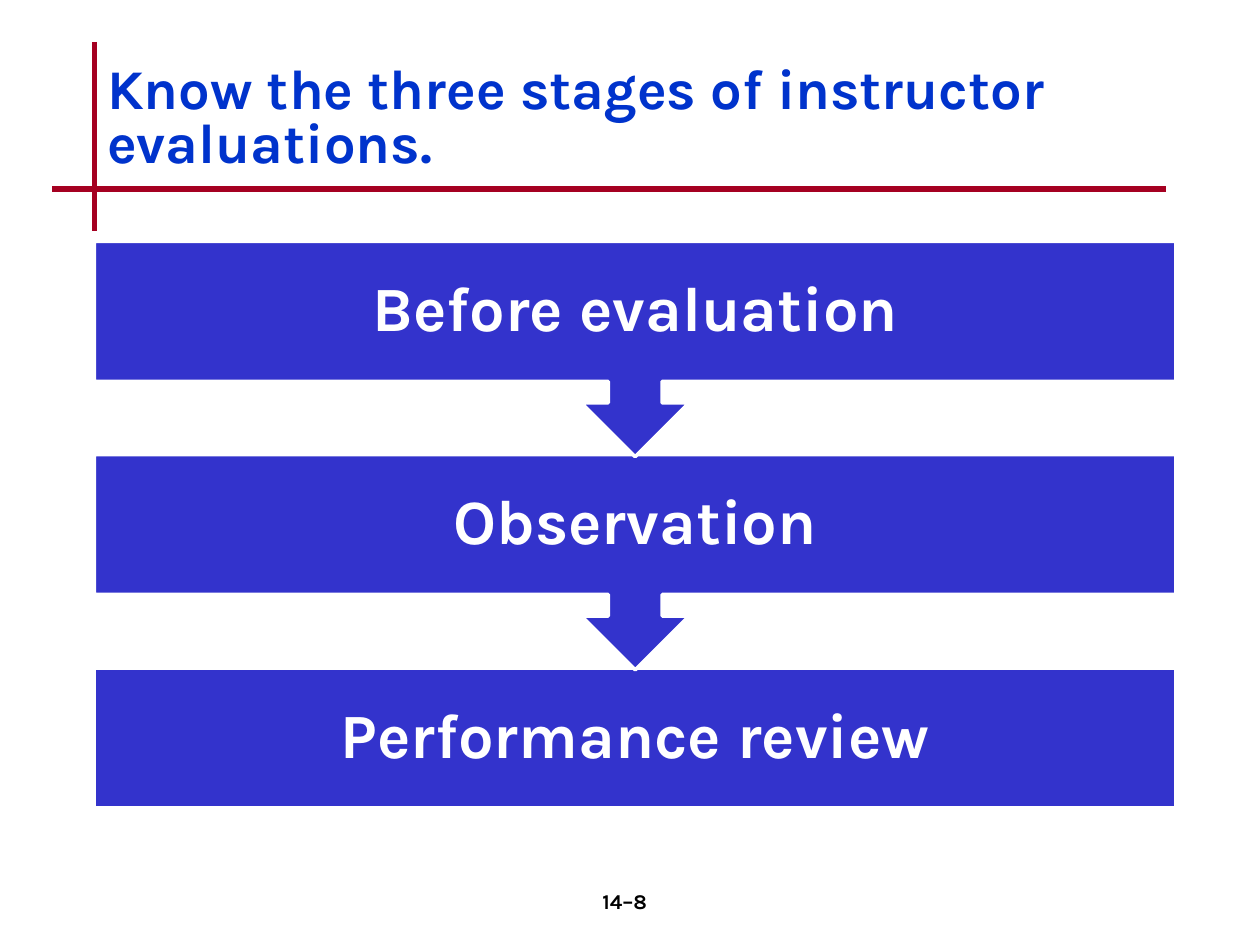
"""Build a slide showing the three stages of instructor evaluations."""
from dataclasses import dataclass

from lxml.etree import SubElement
from pptx import Presentation
from pptx.dml.color import RGBColor
from pptx.enum.shapes import MSO_CONNECTOR, MSO_SHAPE
from pptx.enum.text import MSO_ANCHOR, MSO_AUTO_SIZE, PP_ALIGN
from pptx.oxml.ns import qn
from pptx.slide import Slide
from pptx.text.text import TextFrame
from pptx.util import Pt

FONT = "Karla"
RED = RGBColor(0xA5, 0x00, 0x21)
INDIGO = RGBColor(0x33, 0x33, 0xCC)
BLUE = RGBColor(0x00, 0x33, 0xCC)
WHITE = RGBColor(0xFF, 0xFF, 0xFF)
BLACK = RGBColor(0x00, 0x00, 0x00)

LEFT, TOP, WIDTH, PITCH = 54, 138, 618, 121.8
INSET = 20


@dataclass
class Rule:
    x1: float
    y1: float
    x2: float
    y2: float


@dataclass
class Stage:
    text: str
    shape: MSO_SHAPE
    height: float


RULES = [Rule(54, 24, 54, 132), Rule(30, 108, 666, 108)]
STAGES = [
    Stage("Before evaluation", MSO_SHAPE.DOWN_ARROW_CALLOUT, 123),
    Stage("Observation", MSO_SHAPE.DOWN_ARROW_CALLOUT, 123),
    Stage("Performance review", MSO_SHAPE.RECTANGLE, 80),
]


def write(tf: TextFrame, text: str, *, size: float, color: RGBColor,
          align: PP_ALIGN = PP_ALIGN.CENTER, spacing: float = 1.0,
          anchor: MSO_ANCHOR = MSO_ANCHOR.MIDDLE) -> None:
    tf.word_wrap = True
    tf.auto_size = MSO_AUTO_SIZE.NONE
    tf.vertical_anchor = anchor
    p = tf.paragraphs[0]
    p.alignment = align
    p.line_spacing = spacing
    r = p.add_run()
    r.text = text
    r.font.name = FONT
    r.font.size = Pt(size)
    r.font.bold = True
    r.font.color.rgb = color


def draw_rule(s: Slide, rule: Rule) -> None:
    line = s.shapes.add_connector(MSO_CONNECTOR.STRAIGHT, Pt(rule.x1), Pt(rule.y1),
                                  Pt(rule.x2), Pt(rule.y2))
    line.line.color.rgb = RED
    line.line.width = Pt(3)
    SubElement(line._element.spPr, qn("a:effectLst"))


def draw_stage(s: Slide, stage: Stage, top: float) -> None:
    sp = s.shapes.add_shape(stage.shape, Pt(LEFT), Pt(top), Pt(WIDTH), Pt(stage.height))
    sp.shadow.inherit = False
    sp.fill.solid()
    sp.fill.fore_color.rgb = INDIGO
    sp.line.color.rgb = WHITE
    sp.line.width = Pt(2)
    tf = sp.text_frame
    tf.margin_left = tf.margin_right = tf.margin_top = tf.margin_bottom = Pt(INSET)
    write(tf, stage.text, size=36, color=WHITE, spacing=0.9)


def main() -> None:
    prs = Presentation()
    prs.slide_width, prs.slide_height = Pt(720), Pt(540)
    s = prs.slides.add_slide(prs.slide_layouts[5])

    for rule in RULES:
        draw_rule(s, rule)
    for i, stage in reversed(list(enumerate(STAGES))):
        draw_stage(s, stage, TOP + i * PITCH)

    title = s.shapes.title
    title.left, title.top, title.width, title.height = Pt(54), Pt(24), Pt(612), Pt(90)
    write(title.text_frame, "Know the three stages of instructor evaluations.",
          size=32, color=BLUE, align=PP_ALIGN.LEFT, spacing=0.8)

    number = s.shapes.add_textbox(Pt(282), Pt(504), Pt(150), Pt(36))
    write(number.text_frame, "14–8", size=12, color=BLACK, anchor=MSO_ANCHOR.TOP)

    prs.save("out.pptx")


if __name__ == "__main__":
    main()
